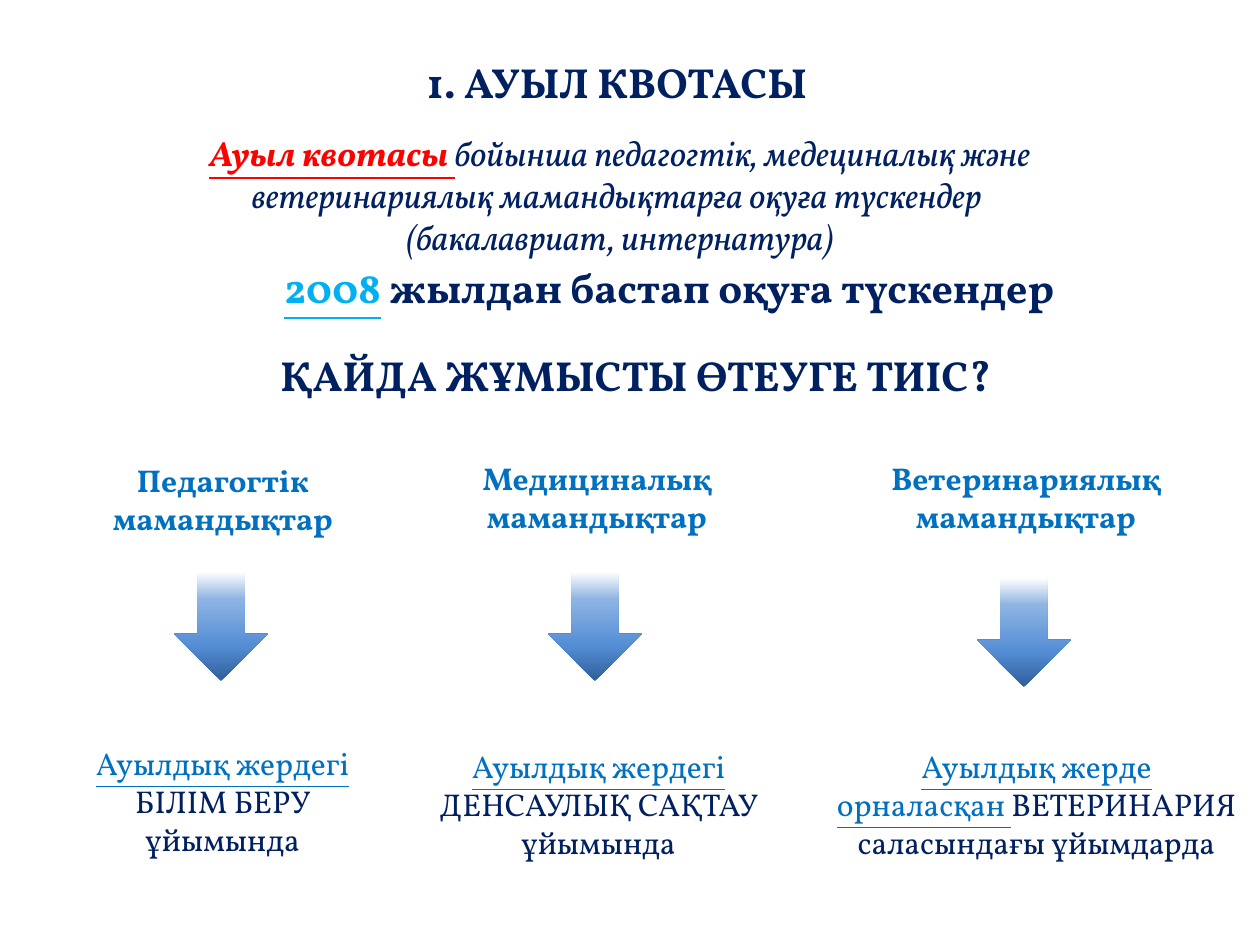
from copy import deepcopy

from pptx import Presentation
from pptx.dml.color import RGBColor
from pptx.enum.shapes import MSO_SHAPE
from pptx.enum.text import MSO_ANCHOR, MSO_AUTO_SIZE, PP_ALIGN
from pptx.oxml.ns import qn
from pptx.util import Emu, Pt

DOWN_ARROW = MSO_SHAPE.DOWN_ARROW
CENTER, LEFT = PP_ALIGN.CENTER, PP_ALIGN.LEFT
TOP, MIDDLE = MSO_ANCHOR.TOP, MSO_ANCHOR.MIDDLE
GROW = MSO_AUTO_SIZE.SHAPE_TO_FIT_TEXT

EMU_PER_PX = 914400 / 126
FONT = "Vollkorn"
TITLE_ONLY = 5
COLORS = {"navy": "002060", "blue": "0070C0", "sky": "00B0F0", "red": "FF0000"}
ARROW_STOPS = [(0, "2F5F99"), (0.33, "558ED5"), (0.75, "8EB4E3"), (1, "FFFFFF")]


def px(length):
    return Emu(round(length * EMU_PER_PX))


class SlideBuilder:
    def __init__(self, slide):
        self.slide = slide

    def fill_text(self, shape, paragraphs, size, align=CENTER, anchor=TOP, wrap=True):
        """Each paragraph is a list of (text, color, styles); styles holds b, i, u."""
        frame = shape.text_frame
        frame.word_wrap = wrap
        frame.vertical_anchor = anchor
        frame.auto_size = GROW
        for index, runs in enumerate(paragraphs):
            paragraph = frame.add_paragraph() if index else frame.paragraphs[0]
            paragraph.alignment = align
            for text, color, styles in runs:
                run = paragraph.add_run()
                run.text = text
                font = run.font
                font.name, font.size = FONT, Pt(size)
                font.bold, font.italic = "b" in styles, "i" in styles
                font.underline = "u" in styles
                font.color.rgb = RGBColor.from_string(COLORS[color])

    def title(self, box, text):
        shape = self.slide.shapes.title
        shape.left, shape.top, shape.width, shape.height = map(px, box)
        self.fill_text(shape, [[(text, "navy", "b")]], 24, anchor=MIDDLE)

    def text(self, box, paragraphs, size, **layout):
        shape = self.slide.shapes.add_textbox(*map(px, box))
        self.fill_text(shape, paragraphs, size, **layout)

    def arrow(self, box):
        shape = self.slide.shapes.add_shape(DOWN_ARROW, *map(px, box))
        shape.shadow.inherit = False
        shape.line.fill.background()
        shape.fill.gradient()
        shape.fill.gradient_angle = 90
        # The default gradient has two stops, so two more are cloned
        stop_list = shape._element.spPr.find(qn("a:gradFill")).find(qn("a:gsLst"))
        for stop in list(stop_list):
            stop_list.append(deepcopy(stop))
        for stop, (position, color) in zip(shape.fill.gradient_stops, ARROW_STOPS):
            stop.position = position
            stop.color.rgb = RGBColor.from_string(color)


def main():
    presentation = Presentation()
    presentation.slide_width, presentation.slide_height = px(1260), px(945)
    slide = presentation.slides.add_slide(presentation.slide_layouts[TITLE_ONLY])
    builder = SlideBuilder(slide)

    # Title and introduction
    builder.title((373, 50, 488, 63), "1. АУЫЛ КВОТАСЫ")
    builder.text((89, 125, 1062, 140), [
        [("Ауыл квотасы ", "red", "biu"),
         ("бойынша педагогтік, медециналық және ветеринариялық "
          "мамандықтарға оқуға түскендер ", "navy", "i")],
        [("(бакалавриат, интернатура)", "navy", "i")],
    ], 20)

    # Start year and question
    builder.text((272, 255, 815, 63), [
        [("2008", "sky", "bu"), (" жылдан бастап оқуға түскендер", "navy", "b")],
    ], 24, align=LEFT, wrap=False)
    builder.text((268, 343, 794, 63), [[("ҚАЙДА ЖҰМЫСТЫ ӨТЕУГЕ ТИІС?", "navy", "b")]],
                 24, align=LEFT, wrap=False)

    # Columns: specialty, its box, arrow top, place, workplace, its box
    columns = [
        ("Педагогтік мамандықтар", (64, 455), 572,
         "Ауылдық жердегі ", "БІЛІМ БЕРУ ұйымында", (44, 738, 357, 127)),
        ("Медициналық мамандықтар", (438, 453), 572,
         "Ауылдық жердегі ", "ДЕНСАУЛЫҚ САҚТАУ ұйымында", (415, 741, 367, 127)),
        ("Ветеринариялық мамандықтар", (867, 453), 578,
         "Ауылдық жерде орналасқан ", "ВЕТЕРИНАРИЯ саласындағы ұйымдарда",
         (823, 741, 427, 165)),
    ]
    for specialty, (left, top), arrow_top, place, workplace, workplace_box in columns:
        builder.text((left, top, 318, 89), [[(specialty, "blue", "b")]], 18)
        builder.arrow((left + 110, arrow_top, 94, 109))
        builder.text(workplace_box, [[(place, "blue", "u"), (workplace, "navy", "")]], 18)

    presentation.save("out.pptx")


if __name__ == "__main__":
    main()
